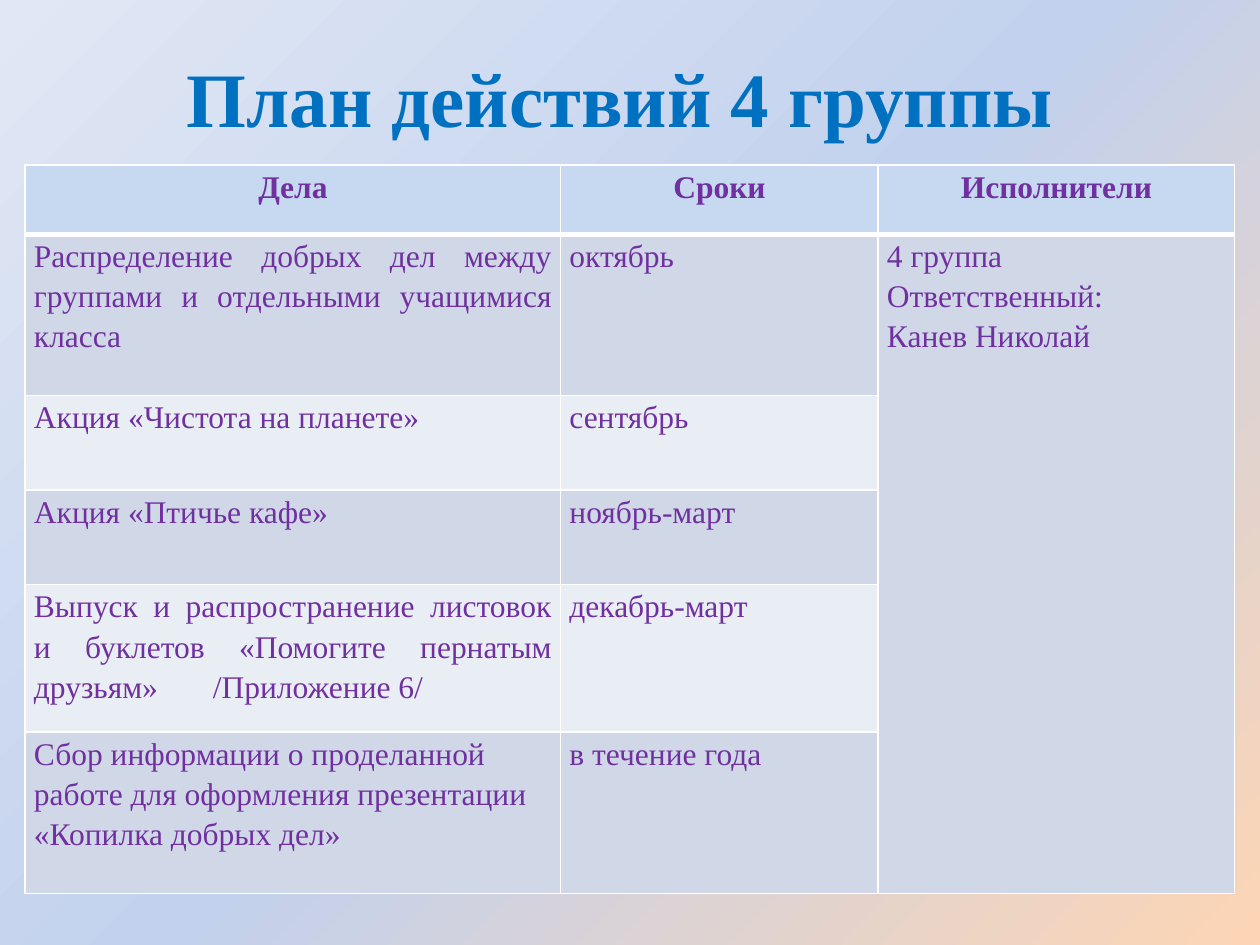
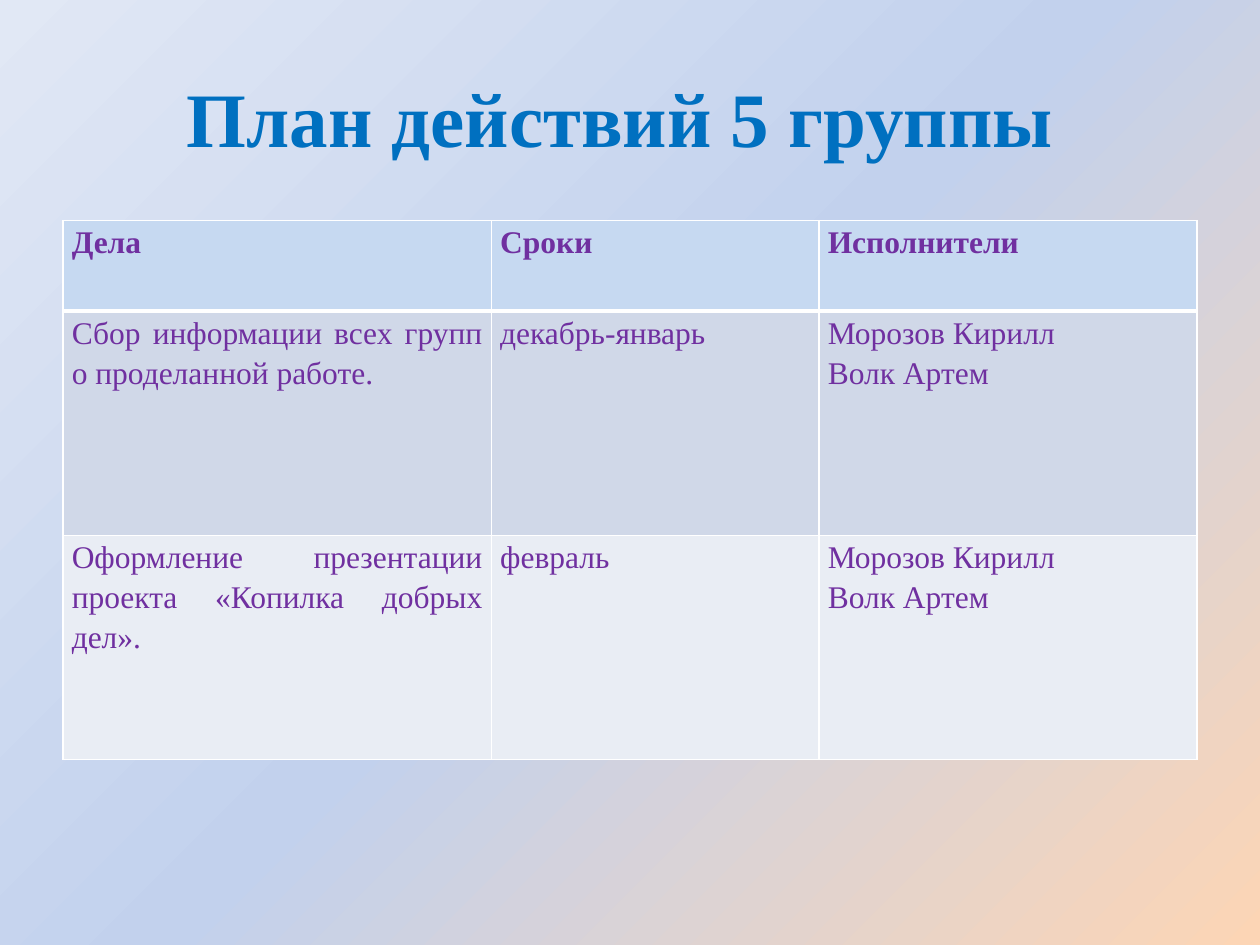
from dataclasses import dataclass

from lxml import etree
from pptx import Presentation
from pptx.dml.color import RGBColor
from pptx.enum.text import MSO_ANCHOR, PP_ALIGN as Align
from pptx.oxml import parse_xml
from pptx.oxml.ns import nsdecls, qn
from pptx.util import Inches, Pt

WIDTH, HEIGHT = Inches(10), Inches(7.5)
UNIT = WIDTH // 1000  # the slide is a grid of 1000 by 750 units


@dataclass(frozen=True)
class Theme:
    font: str = "Times New Roman"
    title: str = "0070C0"
    text: str = "7030A0"
    head: str = "C6D9F1"
    bands: tuple = ("D0D8E8", "E9EDF4")
    line: str = "FFFFFF"
    back: tuple = ((0, "FCD5B5"), (50, "C2D1ED"), (100, "E1E8F5"))
    angle: int = 225
    big: int = 44
    body: int = 18
    thin: int = 1
    thick: int = 3


THEME = Theme()


def units(*sizes):
    return [UNIT * size for size in sizes]


def paint(slide):
    """Give the slide the shared diagonal gradient."""
    slide.background.fill.gradient()
    old = slide.element.find(".//" + qn("a:gradFill"))
    stops = "".join(
        f'<a:gs pos="{pos * 1000}"><a:srgbClr val="{color}"/></a:gs>'
        for pos, color in THEME.back)
    new = parse_xml(
        f'<a:gradFill {nsdecls("a")} rotWithShape="1"><a:gsLst>{stops}</a:gsLst>'
        f'<a:lin ang="{THEME.angle * 60000}" scaled="0"/></a:gradFill>')
    old.getparent().replace(old, new)


def style(par, size, color, bold, align):
    par.alignment = align
    for run in par.runs:
        font = run.font
        font.name, font.size, font.bold = THEME.font, Pt(size), bold
        font.color.rgb = RGBColor.from_string(color)


def add_title(slide, text, height):
    box = slide.shapes.add_textbox(*units(50, 30, 900, height))
    frame = box.text_frame
    frame.word_wrap = True
    frame.vertical_anchor = MSO_ANCHOR.MIDDLE
    frame.text = text
    style(frame.paragraphs[0], THEME.big, THEME.title, True, Align.CENTER)


def edge(cell, top, bottom):
    """Draw the four borders; top and bottom are widths in points."""
    props = cell._tc.get_or_add_tcPr()
    widths = {"L": THEME.thin, "R": THEME.thin, "T": top, "B": bottom}
    for spot, (side, width) in enumerate(widths.items()):
        props.insert(spot, parse_xml(
            f'<a:ln{side} {nsdecls("a")} w="{Pt(width)}"><a:solidFill>'
            f'<a:srgbClr val="{THEME.line}"/></a:solidFill></a:ln{side}>'))


def add_tab(par, place):
    """Set a left tab stop at the given grid unit."""
    tabs = etree.SubElement(par._p.get_or_add_pPr(), qn("a:tabLst"))
    etree.SubElement(tabs, qn("a:tab"), pos=str(UNIT * place), algn="l")


def fill_cell(cell, text, color, bold, align):
    cell.margin_left = cell.margin_right = UNIT * 7
    cell.margin_top = cell.margin_bottom = 0
    cell.fill.solid()
    cell.fill.fore_color.rgb = RGBColor.from_string(color)
    cell.text = text
    for par in cell.text_frame.paragraphs:
        style(par, THEME.body, THEME.text, bold, align)
        par.line_spacing = 1.15
        if "\t" in text:
            add_tab(par, 142)


def add_plan(slide, left, top, cols, rows, data, align):
    """Add a table of tasks; align sets the paragraphs of each row."""
    place = units(left, top, sum(cols), sum(rows))
    table = slide.shapes.add_table(len(rows), len(cols), *place).table
    for col, width in zip(table.columns, units(*cols)):
        col.width = width
    for row, height in zip(table.rows, units(*rows)):
        row.height = height
    for r, line in enumerate(data):
        head = r == 0
        color = THEME.head if head else THEME.bands[(r - 1) % 2]
        for c in range(len(cols)):
            cell = table.cell(r, c)
            text = line[c] if c < len(line) else ""
            fill_cell(cell, text, color, head, align[r])
            edge(cell, THEME.thick if r == 1 else THEME.thin,
                 THEME.thick if head else THEME.thin)
    return table


HEAD = ("Дела", "Сроки", "Исполнители")
TEAM = "Морозов Кирилл\nВолк Артем"

FOURTH = (
    HEAD,
    ("Распределение добрых дел между группами и отдельными учащимися класса",
     "октябрь", "4 группа\nОтветственный:\nКанев Николай"),
    ("Акция «Чистота на планете»", "сентябрь"),
    ("Акция «Птичье кафе»", "ноябрь-март"),
    ("Выпуск и распространение листовок и буклетов "
     "«Помогите пернатым друзьям»\t/Приложение 6/", "декабрь-март"),
    ("Сбор информации о проделанной работе для оформления презентации "
     "«Копилка добрых дел»", "в течение года"),
)
FIFTH = (
    HEAD,
    ("Сбор информации всех групп о проделанной работе.",
     "декабрь-январь", TEAM),
    ("Оформление презентации проекта «Копилка добрых дел».", "февраль", TEAM),
)


def add_slide(deck, title, height):
    slide = deck.slides.add_slide(deck.slide_layouts[6])
    paint(slide)
    add_title(slide, title, height)
    return slide


def main():
    deck = Presentation()
    deck.slide_width, deck.slide_height = WIDTH, HEIGHT

    slide = add_slide(deck, "План действий 4 группы ", 93)
    align = [Align.CENTER] + [Align.JUSTIFY] * 4 + [Align.LEFT]
    table = add_plan(slide, 20, 131, (425, 252, 283),
                     (55, 128, 75, 75, 117, 128), FOURTH, align)
    table.cell(1, 2).merge(table.cell(5, 2))

    slide = add_slide(deck, "План действий 5 группы ", 125)
    add_plan(slide, 50, 175, (340, 260, 300), (72, 178, 178), FIFTH,
             [Align.JUSTIFY] * 3)

    deck.save("out.pptx")


if __name__ == "__main__":
    main()
